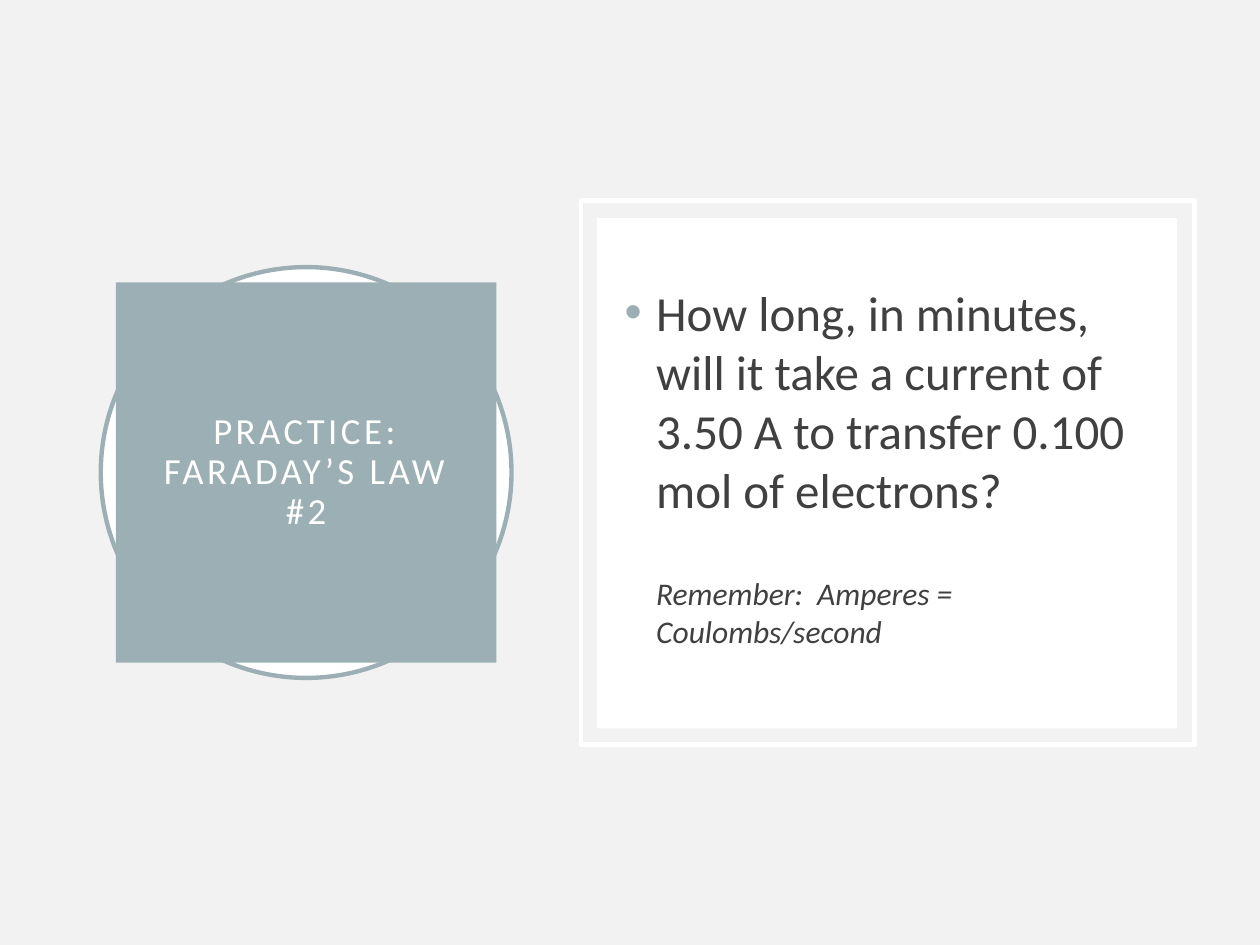
from lxml import etree
from pptx import Presentation
from pptx.dml.color import RGBColor
from pptx.enum.shapes import MSO_SHAPE
from pptx.enum.text import MSO_ANCHOR, PP_ALIGN
from pptx.oxml.ns import qn
from pptx.util import Inches, Pt

OVAL, RECT = MSO_SHAPE.OVAL, MSO_SHAPE.RECTANGLE
MIDDLE = MSO_ANCHOR.MIDDLE
LEFT, CENTER = PP_ALIGN.LEFT, PP_ALIGN.CENTER
W, H = 10, 7.5
FONT = "Calibri"
COLORS = {"back": "F2F2F2", "accent": "9BAFB5", "white": "FFFFFF", "text": "404040"}


def rgb(name):
    return RGBColor.from_string(COLORS[name])


def box(x, y, w, h):
    return [Inches(W * x), Inches(H * y), Inches(W * w), Inches(H * h)]


def add_panel(s, kind, place, fill=None, line=None):
    sp = s.shapes.add_shape(kind, *box(*place))
    sp.shadow.inherit = False
    if fill:
        sp.fill.solid()
        sp.fill.fore_color.rgb = rgb(fill)
    else:
        sp.fill.background()
    if line:
        sp.line.color.rgb = rgb(line)
        sp.line.width = Pt(2.5)
    else:
        sp.line.fill.background()
    return sp


def set_frame(sp, side, bottom):
    tf = sp.text_frame
    tf.word_wrap = True
    tf.vertical_anchor = MIDDLE
    tf.margin_left = tf.margin_right = Inches(side)
    tf.margin_bottom = Inches(bottom)
    return tf


def style(p, size, color, align=LEFT, italic=False, before=0):
    p.alignment = align
    p.space_before = Pt(before)
    for r in p.runs:
        r.font.name = FONT
        r.font.size = Pt(size)
        r.font.italic = italic
        r.font.color.rgb = rgb(color)


def set_indent(p, bullet=None):
    pPr = p._p.get_or_add_pPr()
    pPr.set("marL", str(Inches(0.25)))
    pPr.set("indent", str(-Inches(0.25) if bullet else 0))
    if bullet:
        clr = etree.SubElement(pPr, qn("a:buClr"))
        etree.SubElement(clr, qn("a:srgbClr"), val=COLORS["accent"])
        etree.SubElement(pPr, qn("a:buFont"), typeface="Arial")
        etree.SubElement(pPr, qn("a:buChar"), char=bullet)


def add_title(s, place, text):
    sp = add_panel(s, RECT, place, fill="accent")
    tf = set_frame(sp, 0.3, 0.05)
    tf.text = text
    p = tf.paragraphs[0]
    style(p, 21, "white", CENTER)
    p.line_spacing = 0.9
    for r in p.runs:
        r.font._element.set("spc", "200")


def add_question(s, place, question, hint):
    tf = set_frame(s.shapes.add_textbox(*box(*place)), 0.1, 0.35)
    tf.text = question
    p = tf.paragraphs[0]
    style(p, 28, "text", before=10)
    set_indent(p, "•")
    p = tf.add_paragraph()
    p.text = hint
    style(p, 18, "text", italic=True, before=32)
    set_indent(p)


def main():
    prs = Presentation()
    prs.slide_width, prs.slide_height = Inches(W), Inches(H)
    s = prs.slides.add_slide(prs.slide_layouts[6])
    s.background.fill.solid()
    s.background.fill.fore_color.rgb = rgb("back")

    add_panel(s, OVAL, (0.08, 0.2827, 0.326, 0.4347), "white", "accent")
    add_title(s, (0.092, 0.2987, 0.302, 0.4027), "PRACTICE: FARADAY’S LAW #2")
    add_panel(s, RECT, (0.461, 0.212, 0.487, 0.576), line="white")
    add_panel(s, RECT, (0.474, 0.2307, 0.46, 0.54), fill="white")
    add_question(
        s,
        (0.486, 0.2827, 0.434, 0.4613),
        "How long, in minutes, will it take a current of 3.50 A to transfer 0.100 mol of electrons?",
        "Remember:  Amperes = Coulombs/second",
    )
    prs.save("out.pptx")


if __name__ == "__main__":
    main()
